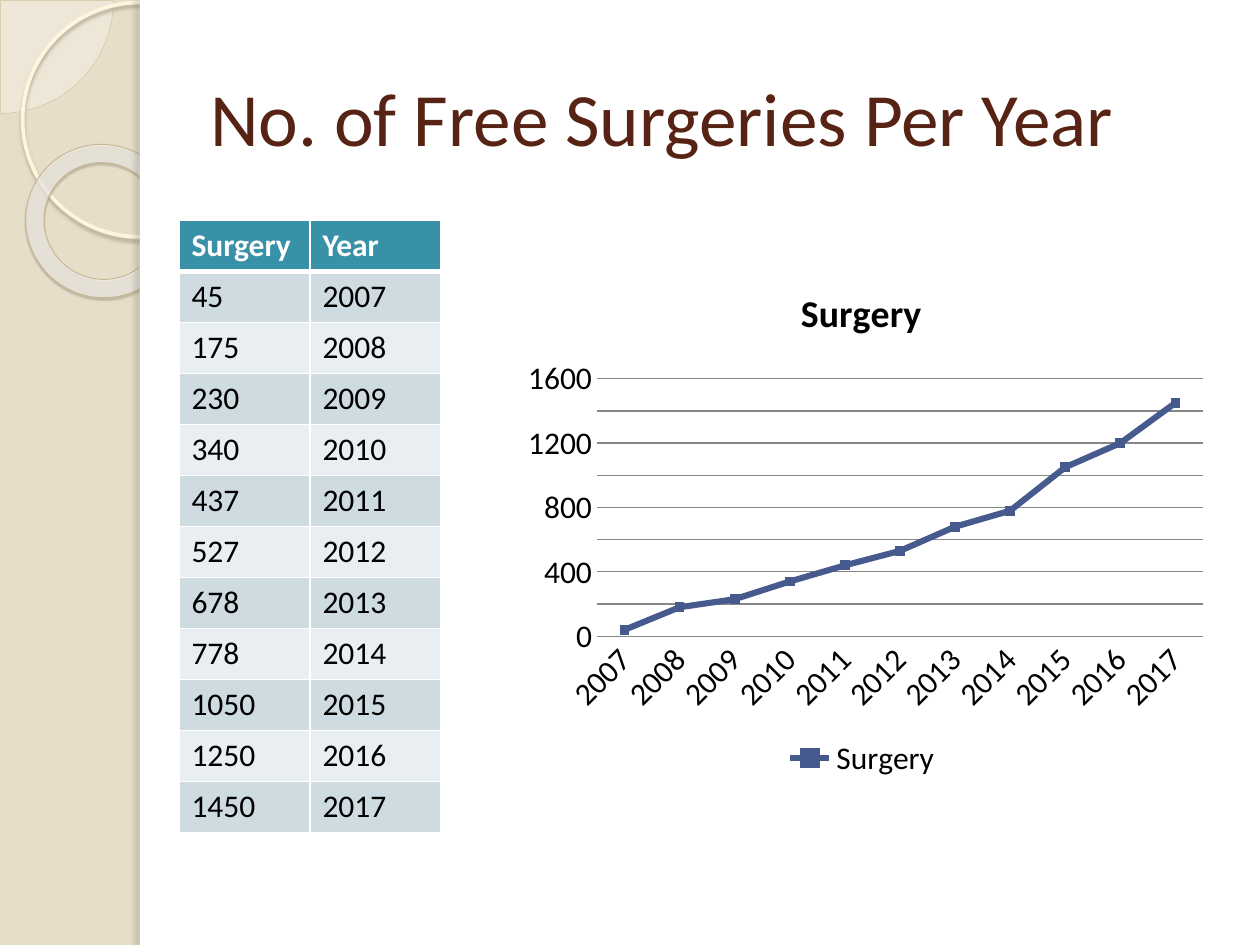
from lxml import etree
from pptx import Presentation
from pptx.chart import data as cd
from pptx.dml import color as dc
from pptx.enum import chart as ec, shapes as es, text as et
from pptx.oxml import ns
from pptx.util import Inches, Pt

THEME = dict(
    font="Calibri", back="E7DEC9", white="FFFFFF", black="000000", brown="572314",
    head="3891A7", bands=("CEDCE1", "E8EEF1"), line="475A8D", grid="868686",
    leaf="FEFAF4", rim="D3C39F", hoop="FFF5DE", ring="F4F0EA", edge="C7B893",
    dusk="B0A68F", dark="5A5444", cast="736F63",
    title=43, body=18, chart=21.6)

TITLE = "No. of Free Surgeries Per Year"
HEAD = ("Surgery", "Year")
YEARS = [str(y) for y in range(2007, 2018)]
COUNTS = [45, 175, 230, 340, 437, 527, 678, 778, 1050, 1250, 1450]
SERIES = "Surgery "
VALUES = [40, 180, 230, 340, 440, 530, 680, 780, 1050, 1200, 1450]

DECOR = [
    dict(kind="PIE", box=(-0.89, -0.89, 1.79, 1.79), adj=(0, 54.02),
         fill=("leaf", 33), line=("rim", 0.25)),
    dict(kind="OVAL", box=(0.18, 0.02, 1.86, 1.86), line=("hoop", 2.15),
         shade=("dusk", 85, 2, 2, 90)),
    dict(kind="DONUT", box=(0.2, 1.15, 1.23, 1.21), adj=(0.12,), turn=38.6,
         fill=("ring", 70), line=("edge", 0.58), shade=("dark", 35, 1, 1.2, 75)),
    dict(kind="RECTANGLE", box=(1.11, 0, 8.89, 7.5), fill=("white", 100)),
    dict(kind="RECTANGLE", box=(1.11, 0, 0.08, 7.5), fill=("white", 100),
         shade=("cast", 25, 3, 3, 180)),
]


def rgb(hue):
    return dc.RGBColor.from_string(THEME.get(hue, hue))


def sub(node, tag, **attrs):
    return etree.SubElement(node, ns.qn(tag), {k: str(v) for k, v in attrs.items()})


def style(font, size, hue="black", bold=False):
    font.name, font.size, font.bold = THEME["font"], Pt(size), bold
    font.color.rgb = rgb(hue)


def decor(slide, kind, box, adj=(), turn=0, fill=None, line=None, shade=None):
    shape = slide.shapes.add_shape(es.MSO_SHAPE[kind], *map(Inches, box))
    for i, val in enumerate(adj):
        shape.adjustments[i] = val
    shape.rotation = turn
    shape.shadow.inherit = False
    props = shape._element.spPr
    if fill:
        shape.fill.solid()
        shape.fill.fore_color.rgb = rgb(fill[0])
        sub(props.find(ns.qn("a:solidFill"))[0], "a:alpha", val=fill[1] * 1000)
    else:
        shape.fill.background()
    if line:
        shape.line.color.rgb, shape.line.width = rgb(line[0]), Pt(line[1])
    else:
        shape.line.fill.background()
    if shade:
        hue, alpha, blur, gap, angle = shade
        cast = sub(props.find(ns.qn("a:effectLst")), "a:outerShdw",
                   blurRad=Pt(blur), dist=Pt(gap), dir=angle * 60000)
        sub(sub(cast, "a:srgbClr", val=THEME[hue]), "a:alpha", val=alpha * 1000)


def title(slide):
    box = map(Inches, (1.57, 0.3, 8.2, 1.25))
    frame = slide.shapes.add_textbox(*box).text_frame
    frame.word_wrap, frame.vertical_anchor = True, et.MSO_ANCHOR.MIDDLE
    frame.text = TITLE
    style(frame.paragraphs[0].runs[0].font, THEME["title"], "brown")


def edge(cell, base):
    props = cell._tc.get_or_add_tcPr()
    for i, (side, width) in enumerate(zip("LRTB", (1, 1, 1, base))):
        line = etree.Element(ns.qn("a:ln" + side), w=str(Pt(width)))
        sub(sub(line, "a:solidFill"), "a:srgbClr", val=THEME["white"])
        props.insert(i, line)


def table(slide):
    rows = [HEAD, *zip(map(str, COUNTS), YEARS)]
    box = map(Inches, (1.42, 1.75, 2.08, 4.86))
    grid = slide.shapes.add_table(len(rows), len(HEAD), *box).table
    for r, row in enumerate(rows):
        top = r == 0
        for c, words in enumerate(row):
            cell = grid.cell(r, c)
            cell.text = words
            style(cell.text_frame.paragraphs[0].runs[0].font, THEME["body"],
                  "white" if top else "black", top)
            cell.fill.solid()
            cell.fill.fore_color.rgb = rgb("head" if top else THEME["bands"][(r - 1) % 2])
            edge(cell, 3 if top else 1)


def chart(slide):
    data = cd.CategoryChartData()
    data.categories = YEARS
    data.add_series(SERIES, VALUES)
    box = map(Inches, (4.08, 2.08, 5.58, 4.14))
    plot = slide.shapes.add_chart(ec.XL_CHART_TYPE.LINE_MARKERS, *box, data).chart
    style(plot.font, THEME["body"])
    plot.has_title = True
    plot.chart_title.text_frame.text = SERIES
    style(plot.chart_title.text_frame.paragraphs[0].runs[0].font, THEME["chart"], bold=True)
    plot.has_legend = True
    plot.legend.position = ec.XL_LEGEND_POSITION.BOTTOM
    plot.legend.include_in_layout = False
    plot.plots[0].vary_by_categories = False
    cats, vals = plot.category_axis, plot.value_axis
    for axis in (cats, vals):
        axis.major_tick_mark = ec.XL_TICK_MARK.NONE
    cats.format.line.color.rgb = rgb("grid")
    vals.format.line.fill.background()
    vals.minimum_scale, vals.maximum_scale, vals.major_unit = 0, 1600, 200
    vals.major_gridlines.format.line.color.rgb = rgb("grid")
    ser = plot.series[0]
    ser.smooth = False
    ser.format.line.color.rgb, ser.format.line.width = rgb("line"), Pt(3.5)
    ser.marker.style, ser.marker.size = ec.XL_MARKER_STYLE.SQUARE, 5
    ser.marker.format.fill.solid()
    ser.marker.format.fill.fore_color.rgb = rgb("line")
    ser.marker.format.line.color.rgb = rgb("line")


def main():
    """Build the yearly free surgeries slide."""
    deck = Presentation()
    deck.slide_width, deck.slide_height = Inches(10), Inches(7.5)
    slide = deck.slides.add_slide(deck.slide_layouts[6])
    slide.background.fill.solid()
    slide.background.fill.fore_color.rgb = rgb("back")
    for part in DECOR:
        decor(slide, **part)
    title(slide)
    table(slide)
    chart(slide)
    deck.save("out.pptx")


if __name__ == "__main__":
    main()
